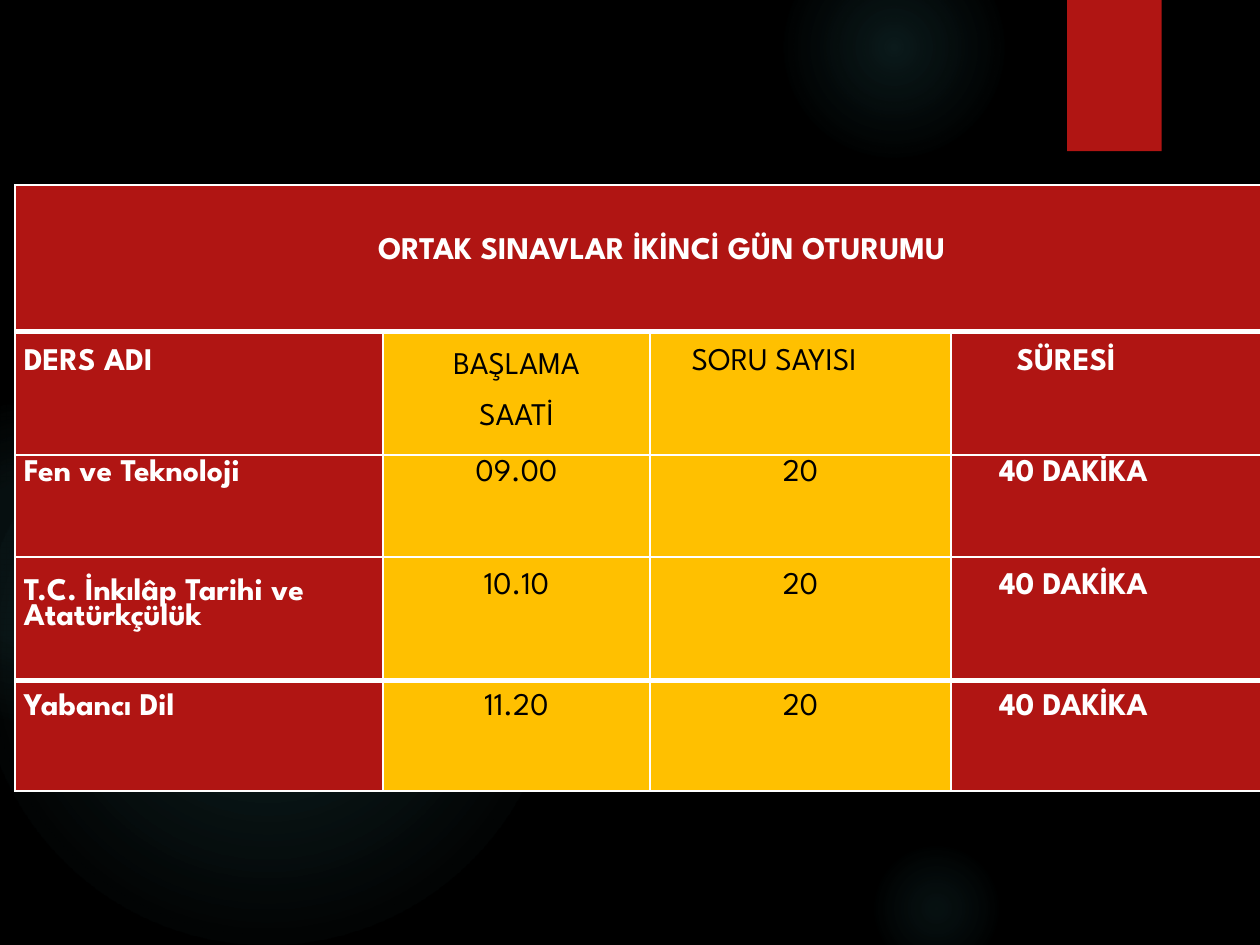
from lxml import etree
from pptx import Presentation
from pptx.dml.color import RGBColor
from pptx.enum.shapes import MSO_SHAPE as Shape
from pptx.enum.text import PP_ALIGN as Align
from pptx.oxml import parse_xml
from pptx.oxml.ns import nsdecls, qn
from pptx.util import Inches, Pt

FONT = "League Spartan"
RED, GOLD, WHITE, BLACK, TEAL = "B01513", "FFC000", "FFFFFF", "000000", "50B9C1"

# Left, top, diameter, then (position %, opacity %) stops
GLOWS = [
    (6.89, 1.83, 3.08, [(0, 7), (36, 6), (69, 0)]),
    (6.22, -0.5, 1.75, [(0, 14), (36, 7), (73, 0)]),
    (6.89, 6.67, 1.08, [(0, 9), (36, 5), (66, 0)]),
    (-0.17, 2.92, 4.58, [(0, 11), (36, 10), (75, 0)]),
    (-0.92, 3.17, 2.58, [(0, 8), (36, 8), (72, 0)]),
]
RIBBON_BOX = (8.47, 0, 0.75, 1.2)
TABLE_BOX = (0.12, 1.47, 9.69, 4.8)
COLUMN_WIDTHS = [2.92, 2.12, 2.39, 2.26]
ROW_HEIGHTS = [1.16, 0.98, 0.81, 0.98, 0.88]
TOP_MARGINS = [0.38, 0.1, 0, 0.09, 0.07]
THICK_EDGES = {(0, "B"), (1, "T"), (3, "B"), (4, "T")}

TITLE = "ORTAK SINAVLAR İKİNCİ GÜN OTURUMU"
HEADINGS = ["DERS ADI", "BAŞLAMA\nSAATİ", "SORU SAYISI", "SÜRESİ"]
EXAMS = [
    ("Fen ve Teknoloji", "09.00"),
    ("T.C. İnkılâp Tarihi ve\nAtatürkçülük", "10.10"),
    ("Yabancı Dil", "11.20"),
]
QUESTION_COUNT, DURATION = "20", "40 DAKİKA"


def color(value):
    return RGBColor.from_string(value)


def paint(fill, value):
    fill.solid()
    fill.fore_color.rgb = color(value)


def add_plain_shape(slide, kind, box):
    shape = slide.shapes.add_shape(kind, *map(Inches, box))
    shape.shadow.inherit = False
    shape.line.fill.background()
    return shape


def add_glow(slide, left, top, diameter, stops):
    """Add a circle whose teal centre fades out to nothing."""
    shape = add_plain_shape(slide, Shape.OVAL, (left, top, diameter, diameter))
    stop_xml = "".join(
        f'<a:gs pos="{position * 1000}"><a:srgbClr val="{TEAL}">'
        f'<a:alpha val="{opacity * 1000}"/></a:srgbClr></a:gs>'
        for position, opacity in stops
    )
    gradient = parse_xml(
        f'<a:gradFill {nsdecls("a")}><a:gsLst>{stop_xml}</a:gsLst>'
        '<a:path path="circle"><a:fillToRect l="50000" t="50000" r="50000" b="50000"/>'
        "</a:path></a:gradFill>"
    )
    shape.element.spPr.find(qn("a:prstGeom")).addnext(gradient)


def add_backdrop(slide):
    paint(slide.background.fill, BLACK)
    for glow in GLOWS:
        add_glow(slide, *glow)
    paint(add_plain_shape(slide, Shape.RECTANGLE, RIBBON_BOX).fill, RED)


def style_cell(cell, row, fill):
    properties = cell._tc.get_or_add_tcPr()
    for side in "LRTB":
        width = Pt(3 if (row, side) in THICK_EDGES else 1)
        line = etree.SubElement(properties, qn(f"a:ln{side}"), w=str(width))
        solid = etree.SubElement(line, qn("a:solidFill"))
        etree.SubElement(solid, qn("a:srgbClr"), val=WHITE)
    paint(cell.fill, fill)
    cell.margin_left = cell.margin_right = cell.margin_bottom = 0
    cell.margin_top = Inches(TOP_MARGINS[row])


def write_cell(cell, text, fill, indent=None, gap=0):
    """Write lines from an indent, or centred when there is none."""
    lines = text.split("\n")
    if indent is not None:
        cell.margin_left = Inches(indent)
    if len(lines) > 1:
        cell.margin_top = Inches(0.2)
    for index, line in enumerate(lines):
        frame = cell.text_frame
        paragraph = frame.paragraphs[0] if index == 0 else frame.add_paragraph()
        paragraph.alignment = Align.CENTER if indent is None else Align.LEFT
        paragraph.line_spacing = Pt(14.4) if len(lines) > 1 else 1.15
        paragraph.space_before = Pt(gap if index else 0)
        run = paragraph.add_run()
        run.text = line
        run.font.name = FONT
        run.font.size = Pt(18)
        run.font.bold = fill == RED
        run.font.color.rgb = color(WHITE if fill == RED else BLACK)


def add_exam_table(slide, box):
    table = slide.shapes.add_table(
        len(ROW_HEIGHTS), len(COLUMN_WIDTHS), *map(Inches, box)
    ).table
    for column, width in zip(table.columns, COLUMN_WIDTHS):
        column.width = Inches(width)
    for row, height in zip(table.rows, ROW_HEIGHTS):
        row.height = Inches(height)

    fills = [RED, GOLD, GOLD, RED]
    heading_indents = [0.07, None, 0.33, 0.52]
    exam_indents = [0.07, None, None, 0.38]
    body = [HEADINGS] + [[*exam, QUESTION_COUNT, DURATION] for exam in EXAMS]

    for column in range(len(COLUMN_WIDTHS)):
        style_cell(table.cell(0, column), 0, RED)
    table.cell(0, 0).merge(table.cell(0, len(COLUMN_WIDTHS) - 1))
    write_cell(table.cell(0, 0), TITLE, RED, indent=2.88)

    for row, texts in enumerate(body, start=1):
        indents = heading_indents if row == 1 else exam_indents
        for column, (text, fill, indent) in enumerate(zip(texts, fills, indents)):
            cell = table.cell(row, column)
            style_cell(cell, row, fill)
            write_cell(cell, text, fill, indent, gap=14.4 if row == 1 else 0)


def main():
    presentation = Presentation()
    presentation.slide_width, presentation.slide_height = Inches(10), Inches(7.5)
    slide = presentation.slides.add_slide(presentation.slide_layouts[6])
    add_backdrop(slide)
    add_exam_table(slide, TABLE_BOX)
    presentation.save("out.pptx")


if __name__ == "__main__":
    main()
